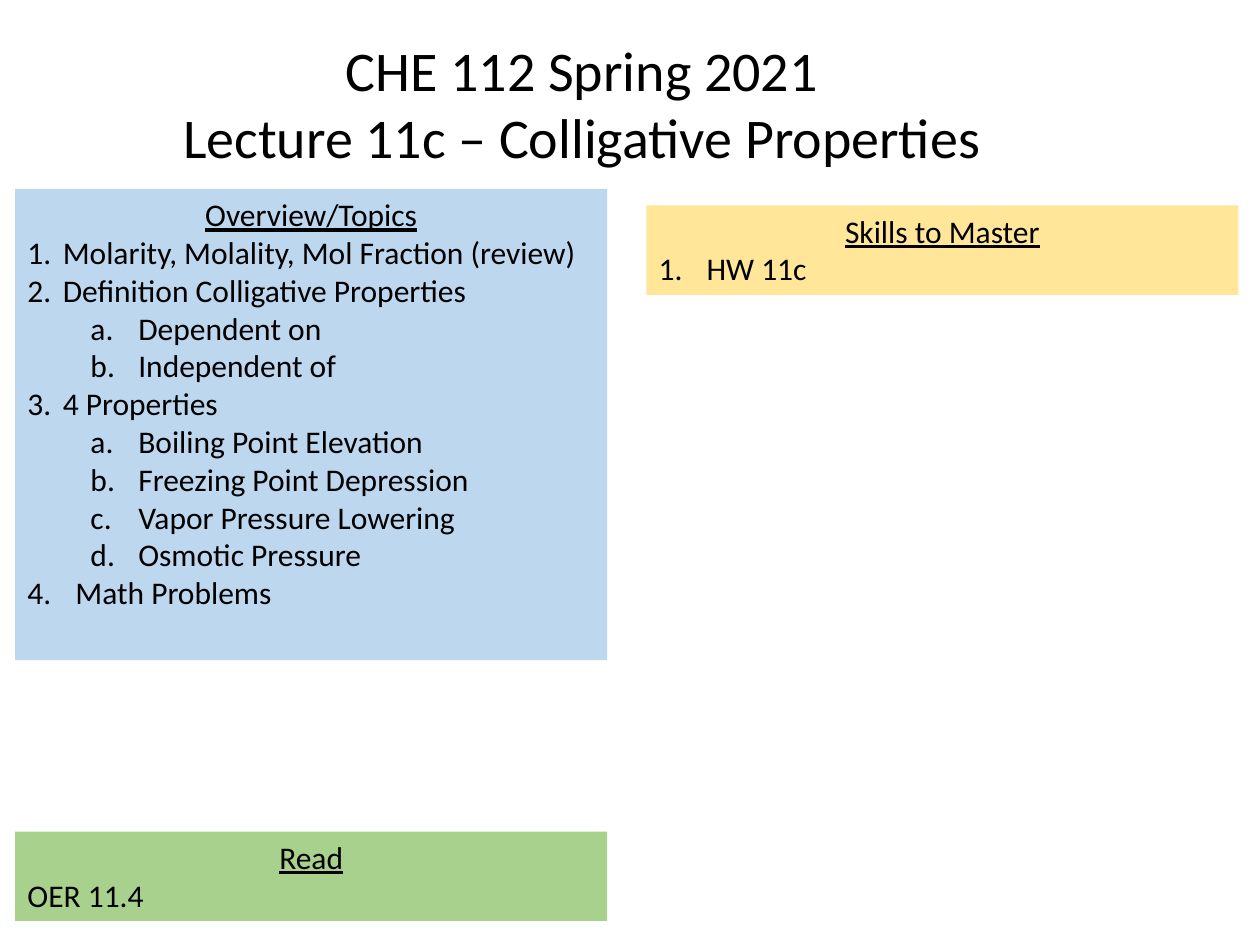
"""Build the lecture overview slide with its topics, skills and reading panels."""
from dataclasses import dataclass

from lxml import etree
from pptx import Presentation
from pptx.dml.color import RGBColor
from pptx.enum.shapes import MSO_SHAPE
from pptx.enum.text import MSO_ANCHOR, PP_ALIGN
from pptx.oxml.ns import qn
from pptx.util import Inches, Pt

RECT = MSO_SHAPE.RECTANGLE
TOP = MSO_ANCHOR.TOP
LEFT, CENTER = PP_ALIGN.LEFT, PP_ALIGN.CENTER


@dataclass(frozen=True)
class Theme:
    font: str = "Calibri"
    text: str = "000000"
    blue: str = "BDD7EE"
    yellow: str = "FFE699"
    green: str = "A9D18E"
    title: int = 32
    body: int = 18


theme = Theme()


def add_text(tf, text, size=theme.body, align=LEFT, underline=False,
             level=0, number=None, margin=0, hang=0):
    p = tf.paragraphs[0] if not tf.paragraphs[0].runs else tf.add_paragraph()
    p.alignment = align
    p.level = level
    r = p.add_run()
    r.text = text
    r.font.name = theme.font
    r.font.size = Pt(size)
    r.font.underline = underline
    r.font.color.rgb = RGBColor.from_string(theme.text)
    if number:
        pPr = p._p.get_or_add_pPr()
        pPr.set("marL", str(Inches(margin)))
        pPr.set("indent", str(-Inches(hang)))
        etree.SubElement(pPr, qn("a:buFont"), typeface="+mj-lt")
        etree.SubElement(pPr, qn("a:buAutoNum"), type=number)


topic = dict(number="arabicPeriod", margin=0.28, hang=0.28)
subtopic = dict(number="alphaLcPeriod", margin=0.88, hang=0.38, level=1)
wide = dict(number="arabicPeriod", margin=0.38, hang=0.38)

panels = [
    (0.12, 1.5, 3.74, theme.blue, "Overview/Topics", [
        ("Molarity, Molality, Mol Fraction (review)", topic),
        ("Definition Colligative Properties", topic),
        ("Dependent on", subtopic),
        ("Independent of", subtopic),
        ("4 Properties", topic),
        ("Boiling Point Elevation", subtopic),
        ("Freezing Point Depression", subtopic),
        ("Vapor Pressure Lowering", subtopic),
        ("Osmotic Pressure", subtopic),
        ("Math Problems", wide),
    ]),
    (5.13, 1.63, 0.71, theme.yellow, "Skills to Master", [("HW 11c", wide)]),
    (0.12, 6.6, 0.71, theme.green, "Read", [("OER 11.4", {})]),
]

prs = Presentation()
prs.slide_width, prs.slide_height = Inches(10), Inches(7.5)
s = prs.slides.add_slide(prs.slide_layouts[6])

for left, top, height, color, heading, items in panels:
    sp = s.shapes.add_shape(RECT, Inches(left), Inches(top), Inches(4.7), Inches(height))
    sp.shadow.inherit = False
    sp.fill.solid()
    sp.fill.fore_color.rgb = RGBColor.from_string(color)
    sp.line.fill.background()
    tf = sp.text_frame
    tf.word_wrap = True
    tf.vertical_anchor = TOP
    add_text(tf, heading, align=CENTER, underline=True)
    for text, style in items:
        add_text(tf, text, **style)

sp = s.shapes.add_textbox(Inches(1.32), Inches(0.23), Inches(6.6), Inches(1.18))
tf = sp.text_frame
tf.word_wrap = False
for line in ("CHE 112 Spring 2021", "Lecture 11c – Colligative Properties"):
    add_text(tf, line, size=theme.title, align=CENTER)

prs.save("out.pptx")
